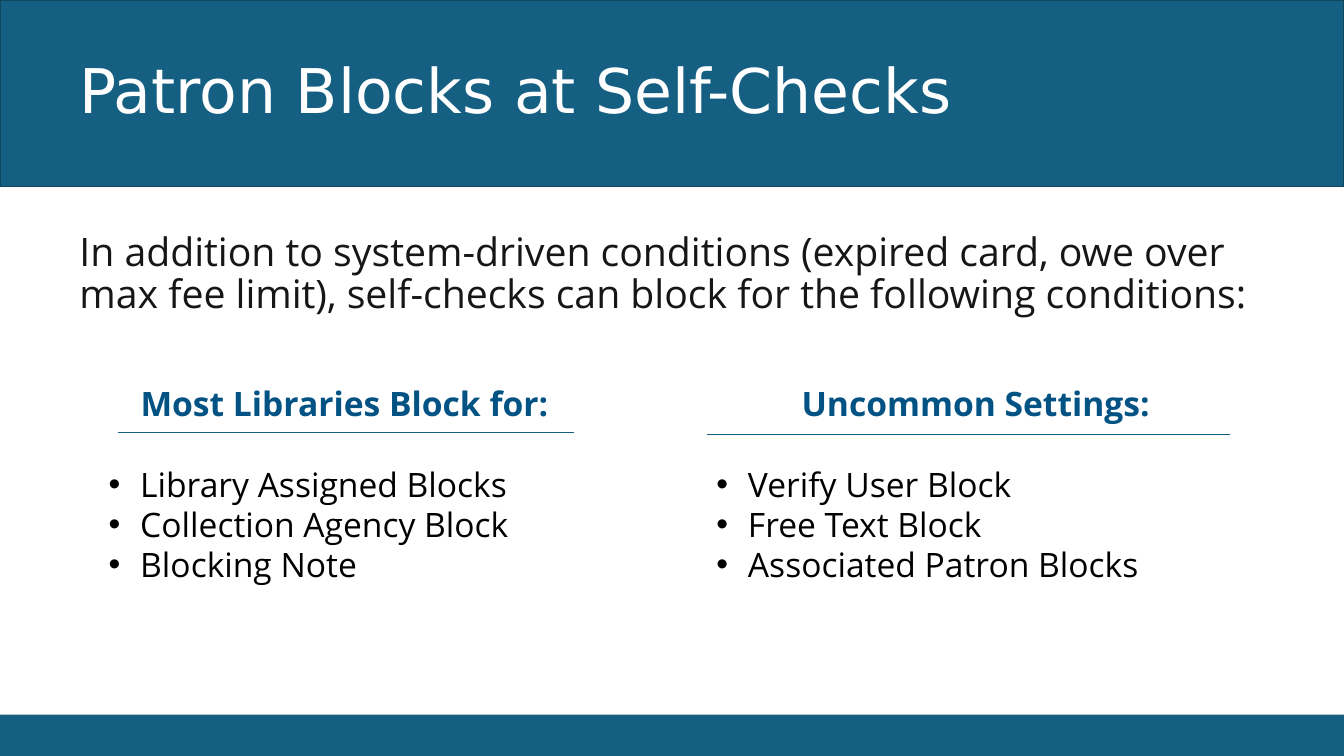
from dataclasses import dataclass

from lxml.etree import SubElement
from pptx import Presentation
from pptx.dml.color import RGBColor
from pptx.enum.shapes import MSO_CONNECTOR as Conn, MSO_SHAPE as Shape
from pptx.enum.text import MSO_ANCHOR as Anchor, PP_ALIGN as Align
from pptx.oxml.ns import qn
from pptx.slide import Slide
from pptx.text.text import TextFrame
from pptx.util import Pt


@dataclass(frozen=True)
class Theme:
    teal: str = "156082"
    edge: str = "104760"
    heading: str = "025283"
    intro: str = "161617"
    black: str = "000000"
    white: str = "FFFFFF"
    title_font: str = "DejaVu Sans"
    body_font: str = "Open Sans"
    title_size: float = 44
    intro_size: float = 28
    body_size: float = 24


@dataclass(frozen=True)
class Box:
    left: float
    top: float
    width: float
    height: float


@dataclass(frozen=True)
class Column:
    box: Box
    heading: str
    items: tuple[str, ...]
    rule_left: float
    rule_right: float
    rule_y: float


THEME = Theme()
WIDTH, HEIGHT = 960, 540
BULLET_INDENT = 22.5
LIST_GAP = 28.8

COLUMNS = (
    Column(Box(70.6, 270, 357.1, 152.6), "Most Libraries Block for: ",
           ("Library Assigned Blocks", "Collection Agency Block", "Blocking Note"),
           84.2, 409.7, 308.9),
    Column(Box(504.7, 270, 384.5, 152.6), "Uncommon Settings:",
           ("Verify User Block", "Free Text Block", "Associated Patron Blocks"),
           504.7, 878.4, 310.3),
)


def add_band(s: Slide, box: Box, edge: str | None = None) -> None:
    sp = s.shapes.add_shape(Shape.RECTANGLE, Pt(box.left), Pt(box.top),
                            Pt(box.width), Pt(box.height))
    sp.shadow.inherit = False
    sp.fill.solid()
    sp.fill.fore_color.rgb = RGBColor.from_string(THEME.teal)
    if edge:
        sp.line.color.rgb = RGBColor.from_string(edge)
        sp.line.width = Pt(1)
    else:
        sp.line.fill.background()


def add_frame(s: Slide, box: Box, anchor: Anchor = Anchor.TOP) -> TextFrame:
    sp = s.shapes.add_textbox(Pt(box.left), Pt(box.top), Pt(box.width), Pt(box.height))
    tf = sp.text_frame
    tf.word_wrap = True
    tf.vertical_anchor = anchor
    return tf


def add_text(tf: TextFrame, text: str, *, size: float, color: str,
             font: str = THEME.body_font, bold: bool = False,
             align: Align = Align.LEFT, spacing: float = 1.0,
             before: float = 0, bullet: bool = False) -> None:
    p = tf.paragraphs[0] if not tf.text else tf.add_paragraph()
    p.alignment = align
    p.line_spacing = spacing
    p.space_before = Pt(before)
    if bullet:
        pPr = p._p.get_or_add_pPr()
        pPr.set("marL", str(Pt(BULLET_INDENT)))
        pPr.set("indent", str(-Pt(BULLET_INDENT)))
        SubElement(pPr, qn("a:buFont"), typeface="Arial")
        SubElement(pPr, qn("a:buChar"), char="•")
    r = p.add_run()
    r.text = text
    r.font.name = font
    r.font.size = Pt(size)
    r.font.bold = bold
    r.font.color.rgb = RGBColor.from_string(color)


def add_rule(s: Slide, left: float, right: float, y: float) -> None:
    line = s.shapes.add_connector(Conn.STRAIGHT, Pt(left), Pt(y), Pt(right), Pt(y))
    line.line.color.rgb = RGBColor.from_string(THEME.teal)
    line.line.width = Pt(0.5)
    SubElement(line._element.spPr, qn("a:effectLst"))


def add_column(s: Slide, column: Column) -> None:
    tf = add_frame(s, column.box)
    add_text(tf, column.heading, size=THEME.body_size, color=THEME.heading,
             bold=True, align=Align.CENTER)
    for i, item in enumerate(column.items):
        add_text(tf, item, size=THEME.body_size, color=THEME.black,
                 before=0 if i else LIST_GAP, bullet=True)
    add_rule(s, column.rule_left, column.rule_right, column.rule_y)


def main() -> None:
    prs = Presentation()
    prs.slide_width, prs.slide_height = Pt(WIDTH), Pt(HEIGHT)
    s = prs.slides.add_slide(prs.slide_layouts[6])

    add_band(s, Box(0, 510.5, WIDTH, 29.5))
    add_band(s, Box(0, 0, WIDTH, 133.2), THEME.edge)

    title = add_frame(s, Box(49.7, 0, 910.3, 133.9), Anchor.MIDDLE)
    add_text(title, "Patron Blocks at Self-Checks", size=THEME.title_size,
             color=THEME.white, font=THEME.title_font, spacing=0.9)

    intro = add_frame(s, Box(49.7, 162.7, 877.7, 68.4))
    add_text(intro, "In addition to system-driven conditions (expired card, owe over "
             "max fee limit), self-checks can block for the following conditions:",
             size=THEME.intro_size, color=THEME.intro, spacing=0.9)

    for column in COLUMNS:
        add_column(s, column)

    prs.save("out.pptx")


if __name__ == "__main__":
    main()
